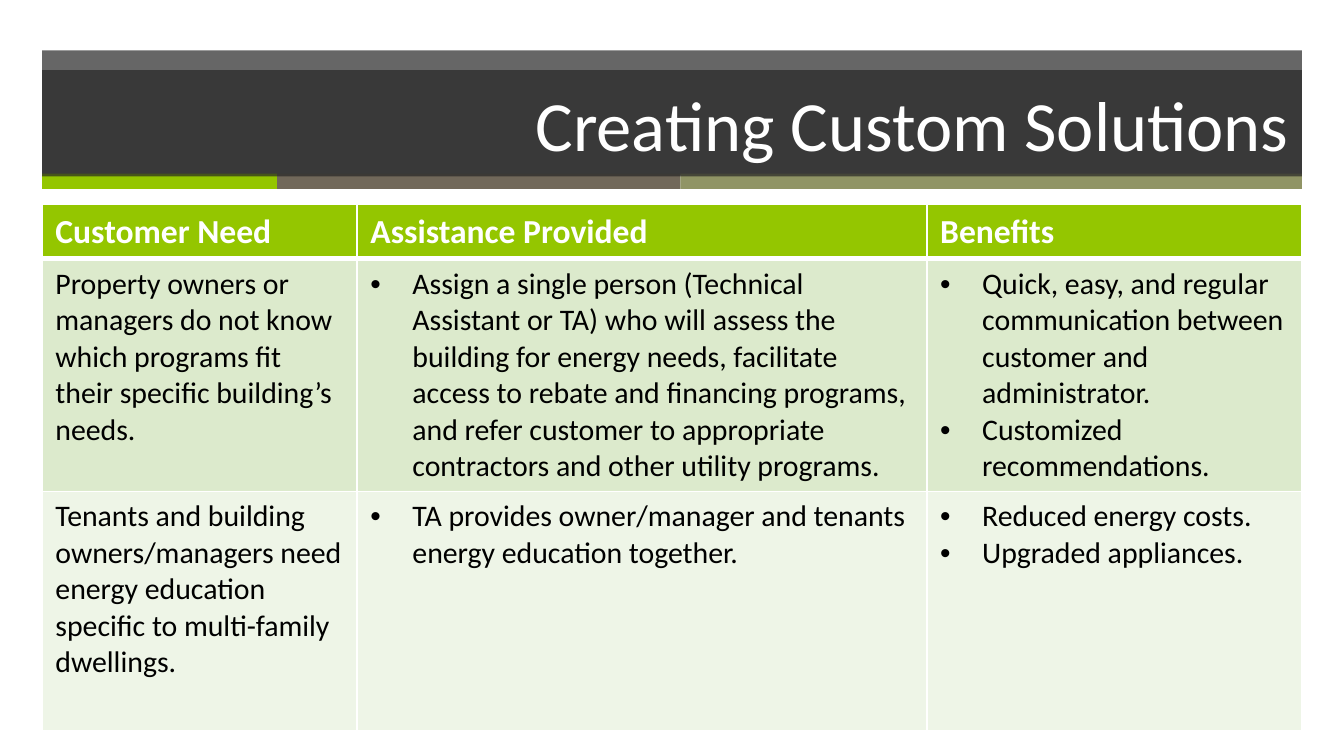
import pptx
import pptx.dml.color
import pptx.enum.shapes
import pptx.enum.text
import pptx.oxml.ns
import pptx.util
from lxml import etree

PX = 9525  # EMU per px, 96 px to the inch
FONT = "Calibri"
COLORS = {
    "dark": "262626",
    "lime": "94C600",
    "brown": "71685A",
    "olive": "909465",
    "row_odd": "DCEACC",
    "row_even": "EEF5E7",
    "white": "FFFFFF",
    "black": "000000",
}
STRIPES = [("lime", 168), ("brown", 288), ("olive", 444)]
COLUMN_WIDTHS = [225, 407, 268]
ROW_HEIGHTS = [37, 165, 171]
BULLET_INDENT = 30

# A string is a plain cell, a list is a bulleted one
ROWS = [
    ["Customer Need", "Assistance Provided", "Benefits"],
    [
        "Property owners or managers do not know which programs fit "
        "their specific building’s needs.",
        ["Assign a single person (Technical Assistant or TA) who will assess the "
         "building for energy needs, facilitate access to rebate and financing "
         "programs, and refer customer to appropriate contractors and other "
         "utility programs."],
        ["Quick, easy, and regular communication between customer and "
         "administrator.",
         "Customized recommendations."],
    ],
    [
        "Tenants and building owners/managers need energy education specific "
        "to multi-family dwellings.",
        ["TA provides owner/manager and tenants energy education together."],
        ["Reduced energy costs.", "Upgraded appliances."],
    ],
]


def px(length):
    return pptx.util.Emu(length * PX)


def rgb(name):
    return pptx.dml.color.RGBColor.from_string(COLORS[name])


def add_element(parent, tag, **attributes):
    return etree.SubElement(parent, pptx.oxml.ns.qn(tag), **attributes)


def add_rectangle(slide, left, top, width, height, color, opacity=100):
    shape = slide.shapes.add_shape(
        pptx.enum.shapes.MSO_SHAPE.RECTANGLE,
        px(left), px(top), px(width), px(height))
    shape.shadow.inherit = False
    shape.fill.solid()
    shape.fill.fore_color.rgb = rgb(color)
    shape.line.fill.background()
    if opacity < 100:
        fill_color = shape.fill._xPr.find(".//" + pptx.oxml.ns.qn("a:srgbClr"))
        add_element(fill_color, "a:alpha", val=str(opacity * 1000))
    return shape


def format_runs(paragraph, size, color, bold=False):
    for run in paragraph.runs:
        run.font.name = FONT
        run.font.size = pptx.util.Pt(size)
        run.font.bold = bold
        run.font.color.rgb = rgb(color)


def add_header(slide, left, top, width):
    # Translucent band behind the title
    add_rectangle(slide, left, top, width, 89, "dark", 70)

    # Coloured stripes along the bottom
    stripe_left = left
    for color, stripe_width in STRIPES:
        add_rectangle(slide, stripe_left, top + 88, stripe_width, 11, color)
        stripe_left += stripe_width

    # Title
    title = add_rectangle(slide, left, top + 14, width, 76, "dark", 70)
    text_frame = title.text_frame
    text_frame.word_wrap = True
    text_frame.vertical_anchor = pptx.enum.text.MSO_ANCHOR.MIDDLE
    text_frame.text = "Creating Custom Solutions"
    paragraph = text_frame.paragraphs[0]
    paragraph.alignment = pptx.enum.text.PP_ALIGN.RIGHT
    format_runs(paragraph, 37.8, "white")


def add_bullet(paragraph):
    properties = paragraph._p.get_or_add_pPr()
    properties.set("marL", str(px(BULLET_INDENT)))
    properties.set("indent", str(px(-BULLET_INDENT)))
    add_element(properties, "a:buFont", typeface="Arial")
    add_element(properties, "a:buChar", char="•")


def set_borders(cell, widths):
    properties = cell._tc.get_or_add_tcPr()
    for index, (side, width) in enumerate(widths.items()):
        line = add_element(properties, "a:ln" + side,
                           w=str(pptx.util.Pt(width)))
        fill = add_element(line, "a:solidFill")
        add_element(fill, "a:srgbClr", val=COLORS["white"])
        properties.insert(index, line)


def fill_cell(cell, content, row_index):
    is_header = row_index == 0
    bulleted = isinstance(content, list)
    cell.text_frame.text = "\n".join(content) if bulleted else content
    for paragraph in cell.text_frame.paragraphs:
        if bulleted:
            add_bullet(paragraph)
        if is_header:
            format_runs(paragraph, 18, "white", True)
        else:
            format_runs(paragraph, 16, "black")
    cell.fill.solid()
    cell.fill.fore_color.rgb = rgb(("lime", "row_odd", "row_even")[row_index])
    set_borders(cell, {"L": 1, "R": 1,
                       "T": 3 if row_index == 1 else 1,
                       "B": 3 if is_header else 1})


def add_solutions_table(slide, left, top):
    table = slide.shapes.add_table(
        len(ROWS), len(COLUMN_WIDTHS), px(left), px(top),
        px(sum(COLUMN_WIDTHS)), px(sum(ROW_HEIGHTS))).table
    for column, width in zip(table.columns, COLUMN_WIDTHS):
        column.width = px(width)
    for row_index, contents in enumerate(ROWS):
        table.rows[row_index].height = px(ROW_HEIGHTS[row_index])
        for column_index, content in enumerate(contents):
            fill_cell(table.cell(row_index, column_index), content, row_index)


def main():
    presentation = pptx.Presentation()
    presentation.slide_width = px(960)
    presentation.slide_height = px(540)
    slide = presentation.slides.add_slide(presentation.slide_layouts[6])
    add_header(slide, 30, 36, 900)
    add_solutions_table(slide, 30, 146)
    presentation.save("out.pptx")


if __name__ == "__main__":
    main()
